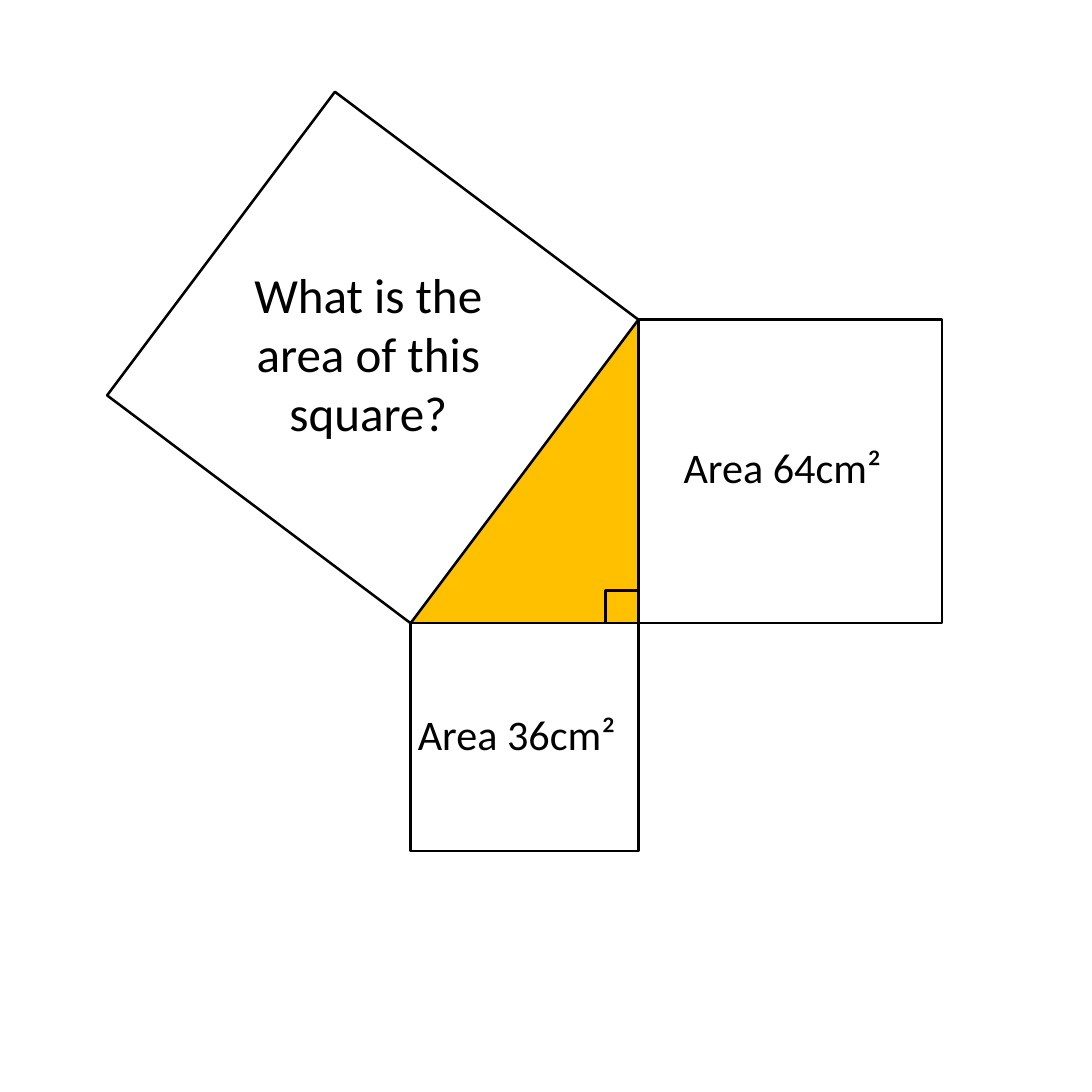
import math

from pptx import Presentation
from pptx.dml import color
from pptx.enum import shapes, text
from pptx.util import Cm, Pt


def paint(fill, value):
    fill.solid()
    fill.fore_color.rgb = color.RGBColor.from_string(value)


def add_figure(page, kind, left, top, width, height):
    figure = page.shapes.add_shape(kind, Cm(left), Cm(top), Cm(width), Cm(height))
    figure.shadow.inherit = False
    figure.fill.background()
    figure.line.fill.background()
    return figure


deck = Presentation()
deck.slide_width = deck.slide_height = Cm(15)
page = deck.slides.add_slide(deck.slide_layouts[6])

# Right-angled triangle with sides in the ratio 6 : 8 : 10
base, height = 3.13, 4.17
hypotenuse = math.hypot(base, height)
left, top = 5.64, 4.39
right, bottom = left + base, top + height

triangle = add_figure(page, shapes.MSO_SHAPE.RIGHT_TRIANGLE, left, top, base, height)
triangle.element.spPr.xfrm.set("flipH", "1")
paint(triangle.fill, "FFC000")

# Squares on the three sides, and the right-angle mark
tilt = 180 + math.degrees(math.atan2(base, height))
center_x = (left + right - height) / 2
center_y = (top + bottom - base) / 2
mark = 0.45
squares = [
    (left, bottom, base, 0),
    (center_x - hypotenuse / 2, center_y - hypotenuse / 2, hypotenuse, tilt),
    (right, top, height, 0),
    (right - mark, bottom - mark, mark, 0),
]
for square_left, square_top, side, angle in squares:
    square = add_figure(page, shapes.MSO_SHAPE.RECTANGLE,
                        square_left, square_top, side, side)
    square.rotation = angle
    paint(square.line.fill, "000000")
    square.line.width = Pt(1)

# Labels: wording, left, top, width, height, size, wrap, alignment
labels = [
    ("Area 36cm²", 5.49, 9.6, 3.25, 0.97, 16.4, False, text.PP_ALIGN.LEFT),
    ("Area 64cm²", 9.14, 5.94, 3.25, 0.97, 16.4, False, text.PP_ALIGN.LEFT),
    ("What is the area of this square?", 2.9, 3.51, 4.32, 2.72, 19.1, True,
     text.PP_ALIGN.CENTER),
]
for wording, box_left, box_top, box_width, box_height, size, wrap, align in labels:
    box = page.shapes.add_textbox(Cm(box_left), Cm(box_top),
                                  Cm(box_width), Cm(box_height))
    frame = box.text_frame
    frame.word_wrap = wrap
    frame.auto_size = text.MSO_AUTO_SIZE.SHAPE_TO_FIT_TEXT
    para = frame.paragraphs[0]
    para.alignment = align
    span = para.add_run()
    span.text = wording
    span.font.name = "Calibri"
    span.font.size = Pt(size)
    paint(span.font.fill, "000000")

deck.save("out.pptx")
